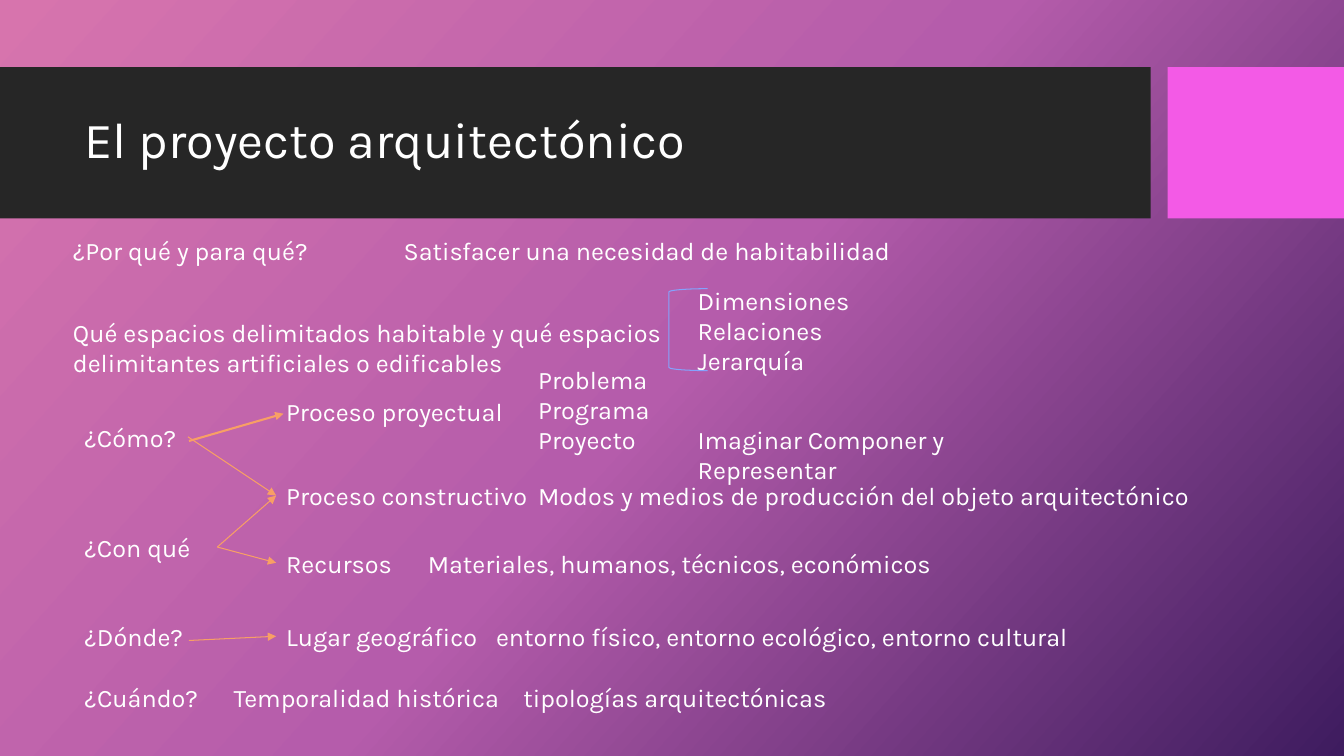
"""Build the slide on the architectural project as an outline with arrows."""
from copy import deepcopy
from dataclasses import dataclass

from lxml.etree import SubElement
from pptx import Presentation
from pptx.dml.color import RGBColor
from pptx.enum.shapes import MSO_CONNECTOR, MSO_SHAPE
from pptx.enum.text import MSO_ANCHOR, MSO_AUTO_SIZE, PP_ALIGN
from pptx.oxml.ns import qn
from pptx.util import Pt

PX = 9525
LEFT, RIGHT = 1, 3


@dataclass(frozen=True)
class Theme:
    font: str = "Karla"
    head: int = 36
    body: int = 18
    text: str = "FFFFFF"
    dark: str = "262626"
    pink: str = "F35AE6"
    arrow: str = "F89F65"
    brace: str = "84A3FD"
    back: tuple = ((0, "D774AD"), (0.5, "B55CAB"), (1, "3E1C5F"))
    angle: int = 42


class Page:
    def __init__(self, deck, theme):
        self.theme = theme
        self.slide = deck.slides.add_slide(deck.slide_layouts[5])
        self.shapes = self.slide.shapes

    def paint(self):
        fill = self.slide.background.fill
        fill.gradient()
        fill.gradient_angle = 360 - self.theme.angle
        stops = self.slide.element.find(".//" + qn("a:gsLst"))
        stops.append(deepcopy(stops[0]))
        for stop, (place, color) in zip(fill.gradient_stops, self.theme.back):
            stop.position = place
            stop.color.rgb = RGBColor.from_string(color)

    def style(self, frame, size):
        for para in frame.paragraphs:
            for run in para.runs:
                run.font.name = self.theme.font
                run.font.size = Pt(size)
                run.font.color.rgb = RGBColor.from_string(self.theme.text)

    def title(self, text, *box):
        shape = self.shapes.title
        shape.left, shape.top, shape.width, shape.height = (n * PX for n in box)
        frame = shape.text_frame
        frame.text = text
        frame.auto_size = MSO_AUTO_SIZE.NONE
        frame.vertical_anchor = MSO_ANCHOR.MIDDLE
        frame.paragraphs[0].alignment = PP_ALIGN.LEFT
        frame.paragraphs[0].line_spacing = 0.9
        self.style(frame, self.theme.head)
        shape.element.getparent().append(shape.element)

    def shape(self, kind, *box, fill=None, line=None):
        shape = self.shapes.add_shape(kind, *(n * PX for n in box))
        shape.shadow.inherit = False
        if fill:
            shape.fill.solid()
            shape.fill.fore_color.rgb = RGBColor.from_string(fill)
        else:
            shape.fill.background()
        if line:
            shape.line.color.rgb = RGBColor.from_string(line)
            shape.line.width = Pt(0.75)
        else:
            shape.line.fill.background()

    def label(self, text, left, top, width, rows=1, tabs=()):
        height = 8 + 30 * rows
        box = self.shapes.add_textbox(*(n * PX for n in (left, top, width, height)))
        frame = box.text_frame
        frame.word_wrap = True
        frame.auto_size = MSO_AUTO_SIZE.SHAPE_TO_FIT_TEXT
        frame.text = text
        if tabs:
            props = frame.paragraphs[0]._p.get_or_add_pPr()
            stops = SubElement(props, qn("a:tabLst"))
            for tab in tabs:
                SubElement(stops, qn("a:tab"), pos=str(tab * PX), algn="l")
        self.style(frame, self.theme.body)
        return box

    def arrow(self, start, end, width=0.75):
        line = self.shapes.add_connector(MSO_CONNECTOR.STRAIGHT, 0, 0, 0, 0)
        if isinstance(start, tuple):
            line.begin_x, line.begin_y = (n * PX for n in start)
        else:
            line.begin_connect(start, RIGHT)
        if isinstance(end, tuple):
            line.end_x, line.end_y = (n * PX for n in end)
        else:
            line.end_connect(end, LEFT)
        line.line.color.rgb = RGBColor.from_string(self.theme.arrow)
        line.line.width = Pt(width)
        props = line.element.spPr
        SubElement(props.find(qn("a:ln")), qn("a:tailEnd"), type="triangle")
        SubElement(props, qn("a:effectLst"))


def main():
    deck = Presentation()
    deck.slide_width, deck.slide_height = 1280 * PX, 720 * PX
    theme = Theme()
    page = Page(deck, theme)
    page.paint()
    page.shape(MSO_SHAPE.RECTANGLE, 0, 64, 1096, 144, fill=theme.dark)
    page.shape(MSO_SHAPE.RECTANGLE, 1112, 64, 168, 144, fill=theme.pink)
    page.title("El proyecto arquitectónico", 71, 79, 1009, 113)

    page.label("¿Por qué y para qué?\tSatisfacer una necesidad de habitabilidad",
               60, 219, 825, tabs=(315,))
    page.label("Qué espacios delimitados habitable y qué espacios "
               "delimitantes artificiales o edificables", 60, 297, 615, 2)
    page.label("Dimensiones\nRelaciones\nJerarquía", 655, 267, 178, 3)
    page.label("Problema\nPrograma\nProyecto", 503, 342, 147, 3)
    page.label("Imaginar Componer y Representar", 655, 399, 290, 2)

    how = page.label("¿Cómo?", 71, 397, 108)
    tool = page.label("¿Con qué", 71, 502, 136)
    page.label("¿Dónde?", 71, 587, 126)
    page.label("¿Cuándo?\tTemporalidad histórica\ttipologías arquitectónicas",
               71, 645, 822, tabs=(142, 418))

    page.label("Proceso proyectual", 263, 373, 337)
    build = page.label("Proceso constructivo", 263, 453, 256)
    means = page.label("Recursos", 263, 517, 135)
    place = page.label("Lugar geográfico\tentorno físico, entorno ecológico, entorno cultural",
                       263, 587, 846, tabs=(200,))
    page.label("Modos y medios de producción del objeto arquitectónico", 503, 453, 681)
    page.label("Materiales, humanos, técnicos, económicos", 398, 517, 548)

    page.arrow((180, 420), (270, 394), 1.5)
    page.arrow(how, build)
    page.arrow(tool, build)
    page.arrow(tool, means)
    page.arrow((180, 610), place)
    page.shape(MSO_SHAPE.LEFT_BRACKET, 637, 275, 37, 78, line=theme.brace)
    deck.save("out.pptx")


if __name__ == "__main__":
    main()
